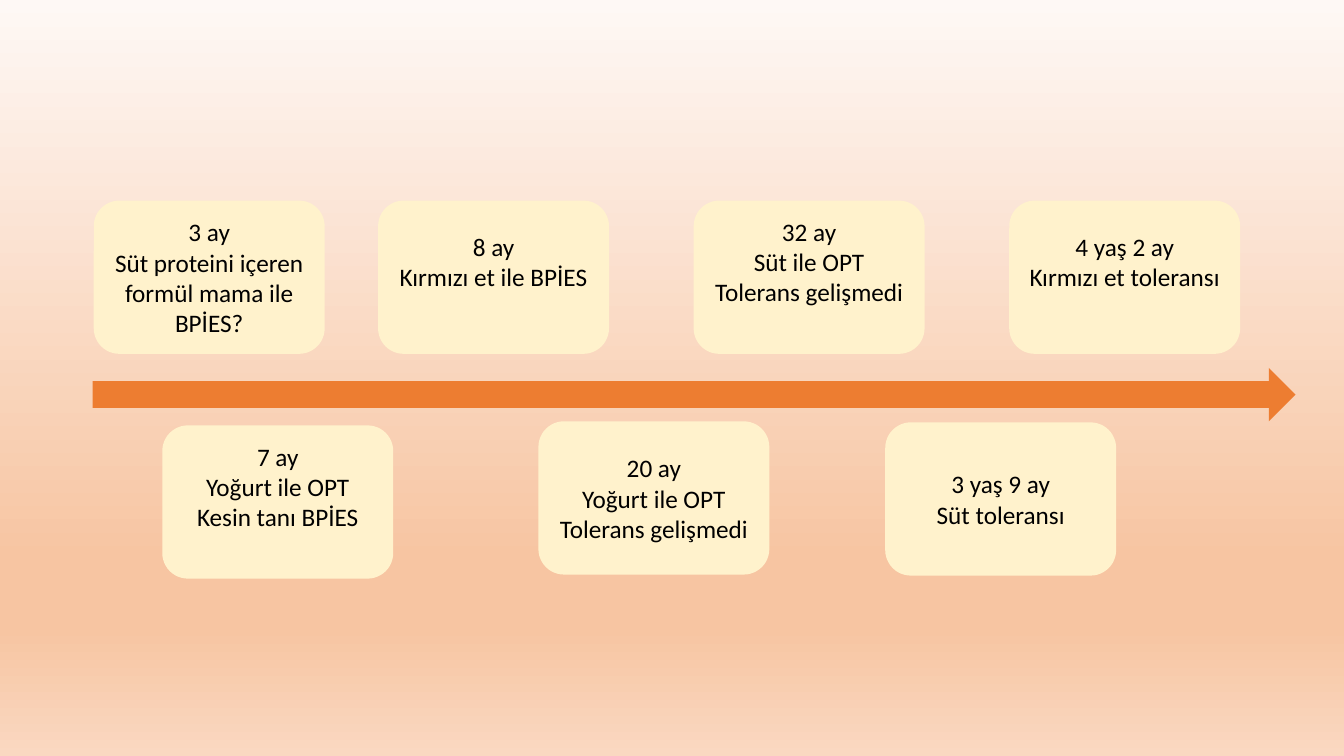
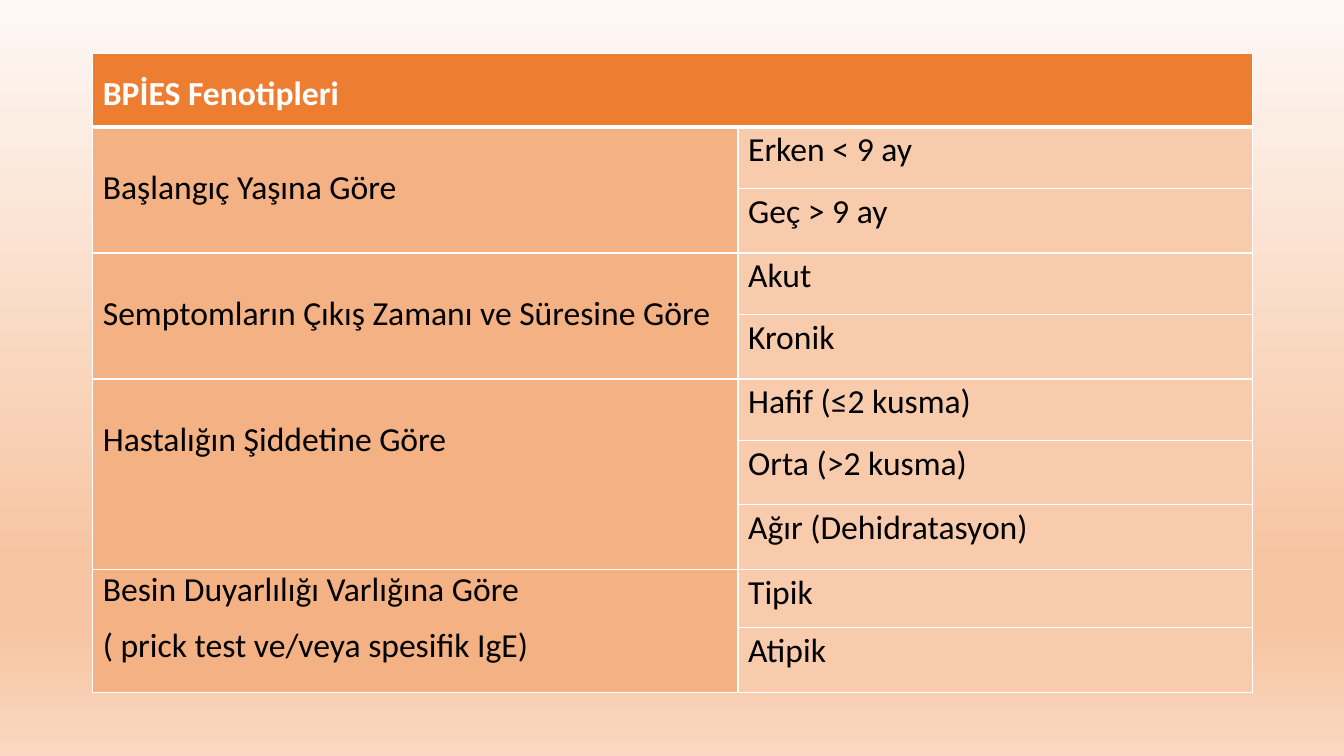
from dataclasses import dataclass

from pptx import Presentation
from pptx.dml.color import RGBColor as Rgb
from pptx.enum.shapes import MSO_SHAPE as Shape
from pptx.enum.text import MSO_ANCHOR as Anchor, PP_ALIGN as Align
from pptx.oxml import parse_xml
from pptx.oxml.ns import nsdecls
from pptx.util import Inches, Pt


@dataclass(frozen=True)
class Theme:
    font: str = "Calibri"
    note: int = 18
    body: int = 24
    ink: str = "000000"
    white: str = "FFFFFF"
    main: str = "ED7D31"
    cream: str = "FFF2CC"
    group: str = "F4B183"
    item: str = "F8CBAD"
    stops: tuple = ((0, "FEF8F5"), (74, "F7C5A2"), (83, "F7C5A2"), (100, "FAD8C1"))


T = Theme()

# Timeline: left, top, lines, raised by half a line
ABOVE, CARD_W, CARD_H = 1.99, 2.29, 1.52
CARDS = [
    (0.93, ABOVE, ["3 ay", "Süt proteini içeren formül mama ile BPİES?"], False),
    (1.61, 4.22, ["7 ay", "Yoğurt ile OPT", "Kesin tanı BPİES"], True),
    (3.75, ABOVE, ["8 ay", "Kırmızı et ile BPİES"], True),
    (5.34, 4.18, ["20 ay", "Yoğurt ile OPT", "Tolerans gelişmedi"], False),
    (6.88, ABOVE, ["32 ay", "Süt ile OPT", "Tolerans gelişmedi"], True),
    (8.78, 4.19, ["3 yaş 9 ay", "Süt toleransı"], False),
    (10.01, ABOVE, ["4 yaş 2 ay", "Kırmızı et toleransı"], True),
]

# Phenotypes: group lines, line spacing, items
HEAD = "BPİES Fenotipleri"
GROUPS = [
    (["Başlangıç Yaşına Göre"], 2, ["Erken < 9 ay", "Geç > 9 ay"]),
    (["Semptomların Çıkış Zamanı ve Süresine Göre"], 2, ["Akut", "Kronik"]),
    (["Hastalığın Şiddetine Göre"], 2,
     ["Hafif (≤2 kusma)", "Orta (>2 kusma)", "Ağır (Dehidratasyon)"]),
    (["Besin Duyarlılığı Varlığına Göre", "( prick test ve/veya spesifik IgE)"], 1,
     ["Tipik", "Atipik"]),
]
COLS = [6.4, 5.1]
ROWS = [0.73, 0.61, 0.64, 0.61, 0.64, 0.61, 0.64, 0.64, 0.58, 0.64]


def paint(fill, color):
    fill.solid()
    fill.fore_color.rgb = Rgb.from_string(color)


def write(frame, lines, size, color=T.ink, bold=False, align=Align.LEFT,
          gap=1, before=0, after=0):
    for i, line in enumerate(lines):
        para = frame.add_paragraph() if i else frame.paragraphs[0]
        para.alignment, para.line_spacing = align, float(gap)
        para.space_before = Pt(before if i else 0)
        para.space_after = Pt(after)
        run = para.add_run()
        run.text = line
        font = run.font
        font.name, font.size, font.bold = T.font, Pt(size), bold
        font.color.rgb = Rgb.from_string(color)


def backdrop(master):
    """Shared vertical gradient."""
    fill = master.background.fill
    fill.gradient()
    fill.gradient_angle = 270
    stops = "".join(f'<a:gs pos="{pos * 1000}"><a:srgbClr val="{color}"/></a:gs>'
                    for pos, color in T.stops)
    old = master.background._cSld.find(".//{*}gsLst")
    old.getparent().replace(
        old, parse_xml(f'<a:gsLst {nsdecls("a")}>{stops}</a:gsLst>'))


def block(slide, kind, box, color):
    shape = slide.shapes.add_shape(kind, *map(Inches, box))
    shape.shadow.inherit = False
    paint(shape.fill, color)
    shape.line.fill.background()
    return shape


def card(slide, box, lines, raised):
    frame = block(slide, Shape.ROUNDED_RECTANGLE, box, T.cream).text_frame
    frame.word_wrap = True
    frame.vertical_anchor = Anchor.MIDDLE
    if raised:
        frame.margin_bottom = Inches(0.36)
    write(frame, lines, T.note, align=Align.CENTER)


def timeline(slide, box):
    block(slide, Shape.RIGHT_ARROW, box, T.main)
    x, y = box[:2]
    for left, top, lines, raised in CARDS:
        dx, dy = left - 0.92, top - 3.65
        card(slide, (x + dx, y + dy, CARD_W, CARD_H), lines, raised)


def border(cell, top, bottom):
    props = cell._tc.get_or_add_tcPr()
    sides = (("L", 1), ("R", 1), ("T", top), ("B", bottom))
    for i, (side, width) in enumerate(sides):
        props.insert(i, parse_xml(
            f'<a:ln{side} {nsdecls("a")} w="{Pt(width)}"><a:solidFill>'
            f'<a:srgbClr val="{T.white}"/></a:solidFill></a:ln{side}>'))


def entry(cell, lines, gap, color=T.ink, bold=False, after=8):
    write(cell.text_frame, lines, T.body, color, bold,
          gap=gap, before=3, after=after)


def grid(slide, box):
    table = slide.shapes.add_table(len(ROWS), len(COLS), *map(Inches, box)).table
    table.first_row = table.horz_banding = False
    for col, width in zip(table.columns, COLS):
        col.width = Inches(width)
    for row, height in zip(table.rows, ROWS):
        row.height = Inches(height)

    # Fills, margins and rules
    for r in range(len(ROWS)):
        for c, color in enumerate((T.group, T.item)):
            cell = table.cell(r, c)
            paint(cell.fill, color if r else T.main)
            cell.margin_left = cell.margin_right = Inches(0.1)
            cell.margin_top = cell.margin_bottom = 0
            border(cell, 3 if r == 1 else 1, 1 if r else 3)

    # Heading
    table.cell(0, 0).merge(table.cell(0, 1))
    entry(table.cell(0, 0), [HEAD], 1.5, T.white, True, 3)

    # Groups with their items
    r = 1
    for lines, gap, items in GROUPS:
        table.cell(r, 0).merge(table.cell(r + len(items) - 1, 0))
        entry(table.cell(r, 0), lines, gap)
        for item in items:
            entry(table.cell(r, 1), [item], 1.07)
            r += 1


def main():
    prs = Presentation()
    prs.slide_width, prs.slide_height = Inches(13.33), Inches(7.5)
    backdrop(prs.slide_master)
    blank = prs.slide_layouts[6]
    timeline(prs.slides.add_slide(blank), (0.92, 3.65, 11.93, 0.53))
    grid(prs.slides.add_slide(blank), (0.92, 0.53, sum(COLS), sum(ROWS)))
    prs.save("out.pptx")


if __name__ == "__main__":
    main()
